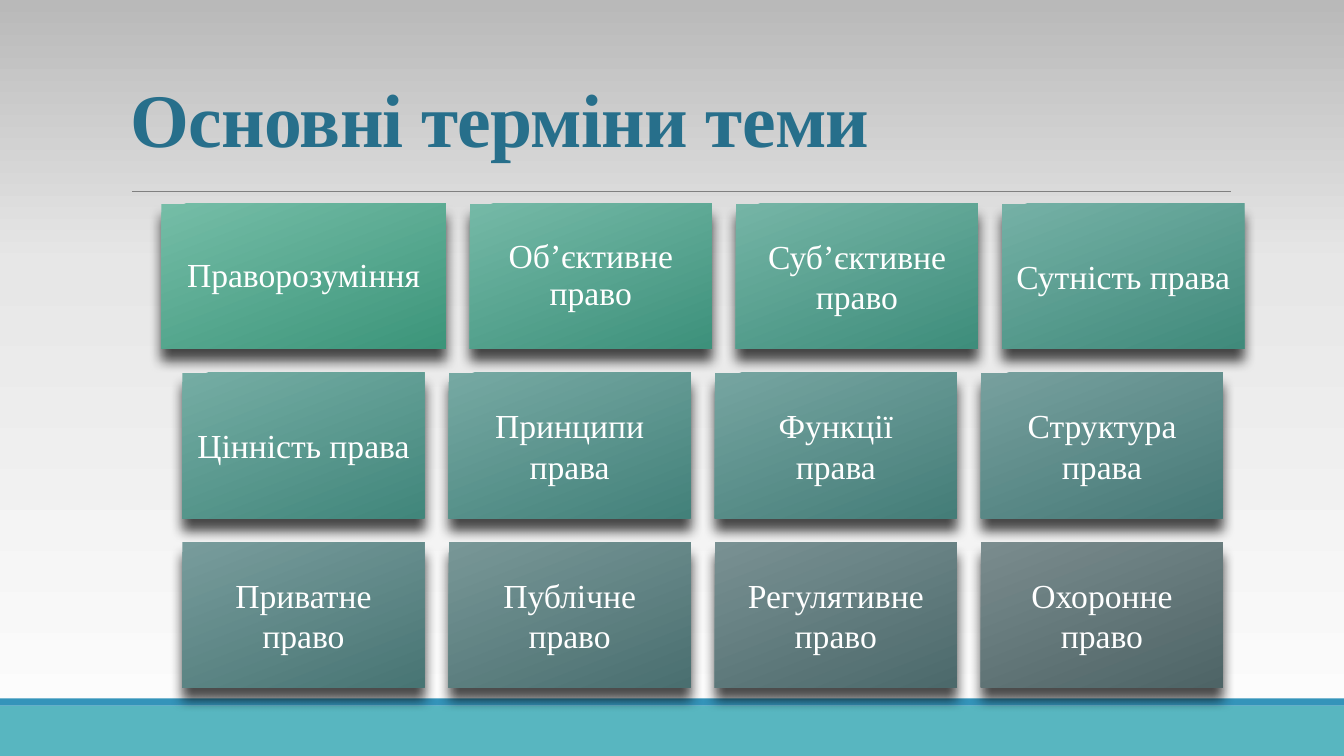
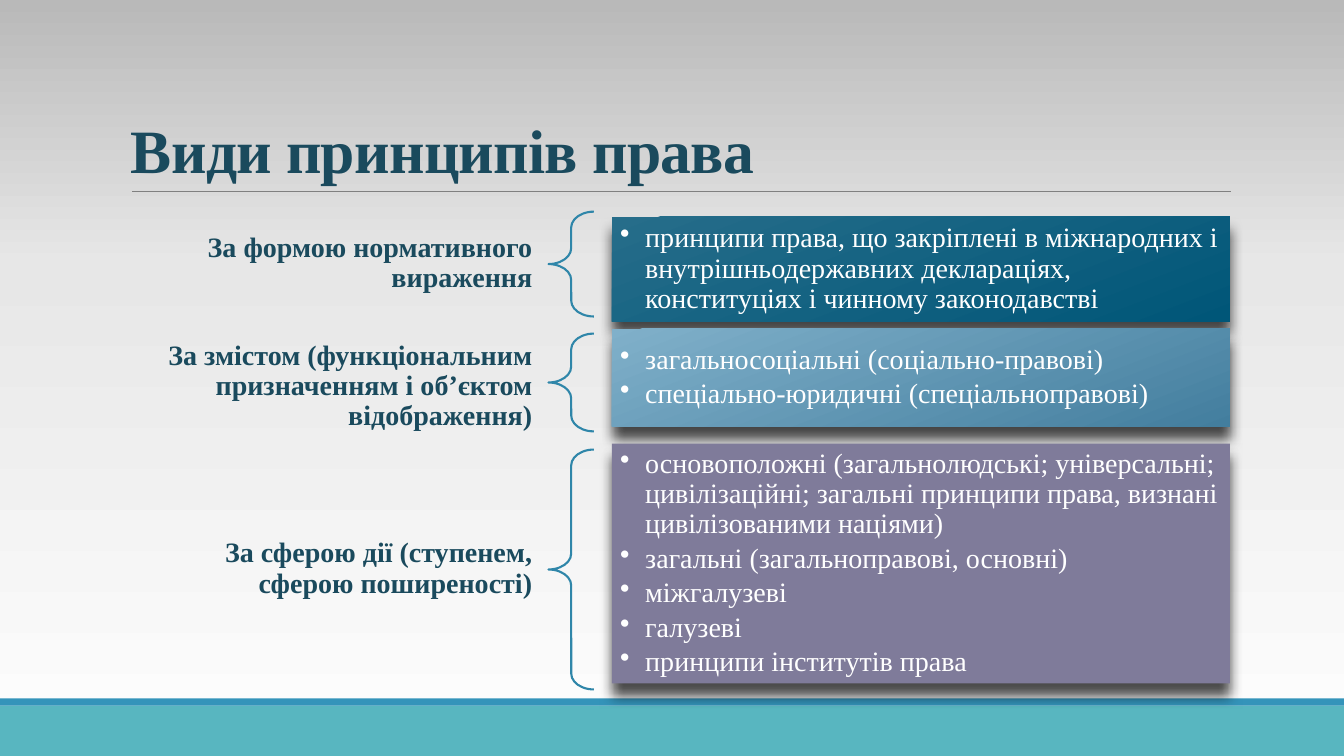
"""Build two slides on the terms and the principles of law."""
from dataclasses import dataclass

from lxml import etree
from pptx import Presentation
from pptx import util as u
from pptx.dml.color import RGBColor
from pptx.enum import shapes, text
from pptx.oxml import ns


@dataclass(frozen=True)
class Theme:
    font: str = "Times New Roman"
    backdrop: tuple = ((0, "FEFEFE"), (65, "E7E7E7"), (100, "B9B9B9"))
    band: str = "58B6C0"
    stripe: str = "3494BA"
    rule: str = "808080"
    brace: str = "2F86A9"
    bright: str = "276F8B"
    dark: str = "1A4A5D"
    light: str = "FFFFFF"
    shadow: str = "000000"
    term_size: int = 24
    body_size: int = 20


THEME = Theme()

TERM_ROWS = [
    [("Праворозуміння", 0.9, "75BDA7", "3C957A"),
     ("Об’єктивне право", 0.9, "75B9A7", "3D917B"),
     ("Суб’єктивне право", 1.0, "75B5A6", "3E8D7B"),
     ("Сутність права", 1.0, "75B1A6", "408A7B")],
    [("Цінність права", 1.0, "75ADA4", "41867B"),
     ("Принципи права", 1.0, "76A9A3", "43817A"),
     ("Функції\nправа", 1.0, "76A5A1", "447D78"),
     ("Структура права", 1.0, "77A09E", "467977")],
    [("Приватне право", 1.0, "789C9C", "487574"),
     ("Публічне право", 1.0, "789797", "4A6F70"),
     ("Регулятивне право", 1.0, "799193", "4C696B"),
     ("Охоронне право", 1.0, "7A8C8E", "4E6466")],
]
WIDE_TERM = "Праворозуміння"

PRINCIPLES = [
    {"label": "За формою нормативного вираження",
     "label_top": 2.13, "brace_top": 2.1, "box_top": 2.15, "height": 1.04,
     "colours": ("266D8A", "005678"),
     "kinds": ["принципи права, що закріплені в міжнародних і внутрішньодержавних "
               "деклараціях, конституціях і чинному законодавстві"]},
    {"label": "За змістом (функціональним призначенням і об’єктом відображення)",
     "label_top": 3.35, "brace_top": 3.31, "box_top": 3.26, "height": 0.97,
     "colours": ("80B0CA", "437E9E"),
     "kinds": ["загальносоціальні (соціально-правові)",
               "спеціально-юридичні (спеціальноправові)"]},
    {"label": "За сферою дії (ступенем, сферою поширеності)",
     "label_top": 5.16, "brace_top": 4.46, "box_top": 4.4, "height": 2.38,
     "colours": ("7F7B9A",),
     "kinds": ["основоположні (загальнолюдські; універсальні; цивілізаційні; "
               "загальні принципи права, визнані цивілізованими націями)",
               "загальні (загальноправові, основні)",
               "міжгалузеві",
               "галузеві",
               "принципи інститутів права"]},
]


def inches(*lengths):
    return [u.Inches(length) for length in lengths]


def rgb(colour):
    return RGBColor.from_string(colour)


def child(parent, tag, **attributes):
    return etree.SubElement(parent, ns.qn(tag), {k: str(v) for k, v in attributes.items()})


def set_gradient(fill, element, stops, clockwise):
    fill.gradient()
    fill.gradient_angle = 360 - clockwise
    stop_list = next(element.iter(ns.qn("a:gsLst")))
    for stop in list(stop_list):
        stop_list.remove(stop)
    for position, colour in stops:
        child(child(stop_list, "a:gs", pos=position * 1000), "a:srgbClr", val=colour)


def write(frame, content, size, colour, bold=False, align=text.PP_ALIGN.LEFT,
          anchor=text.MSO_ANCHOR.MIDDLE, spacing=1.0, margins=(0.1, 0.1)):
    frame.word_wrap = True
    frame.vertical_anchor = anchor
    frame.margin_left = frame.margin_right = u.Inches(margins[0])
    frame.margin_top = frame.margin_bottom = u.Inches(margins[1])
    frame.text = content
    for paragraph in frame.paragraphs:
        paragraph.alignment = align
        paragraph.line_spacing = spacing
        for run in paragraph.runs:
            run.font.name = THEME.font
            run.font.size = u.Pt(size)
            run.font.bold = bold
            run.font.color.rgb = rgb(colour)


def add_block(slide, left, top, width, height, colours):
    block = slide.shapes.add_shape(
        shapes.MSO_SHAPE.RECTANGLE, *inches(left, top, width, height))
    block.shadow.inherit = False
    block.line.fill.background()
    if len(colours) == 1:
        block.fill.solid()
        block.fill.fore_color.rgb = rgb(colours[0])
    else:
        set_gradient(block.fill, block.element, zip((0, 100), colours), 69)
    return block


def cast_shadow(block):
    effects = next(block.element.iter(ns.qn("a:effectLst")))
    shadow = child(effects, "a:outerShdw", blurRad=u.Pt(9), dist=u.Pt(9),
                   dir=90 * 60000, algn="ctr", rotWithShape=0)
    child(child(shadow, "a:srgbClr", val=THEME.shadow), "a:alpha", val=70000)


def add_base(deck, title, top, height, size, colour):
    slide = deck.slides.add_slide(deck.slide_layouts[6])
    set_gradient(slide.background.fill, slide.element, THEME.backdrop, 270)
    add_block(slide, 0, 7, 13.33, 0.5, (THEME.band,))
    add_block(slide, 0, 6.93, 13.33, 0.07, (THEME.stripe,))
    rule = slide.shapes.add_connector(
        shapes.MSO_CONNECTOR.STRAIGHT, *inches(1.31, 1.9, 12.21, 1.9))
    rule.line.color.rgb = rgb(THEME.rule)
    rule.line.width = u.Pt(0.5)
    child(rule.element.spPr, "a:effectLst")
    heading = slide.shapes.add_textbox(*inches(1.2, top, 11, height)).text_frame
    write(heading, title, size, colour, bold=True, spacing=0.85,
          anchor=text.MSO_ANCHOR.BOTTOM, margins=(0.1, 0.05))
    heading.paragraphs[0].runs[0].font._element.set("spc", "-50")
    return slide


def add_terms(deck):
    slide = add_base(deck, "Основні терміни теми", 0.7, 0.97, 54, THEME.bright)
    centre, first_top, height, gap = 6.97, 2.02, 1.44, 0.24
    for row, terms in enumerate(TERM_ROWS):
        widths = [2.82 if term[0] == WIDE_TERM else 2.4 for term in terms]
        left = centre - (sum(widths) + gap * (len(widths) - 1)) / 2
        for (term, spacing, *colours), width in zip(terms, widths):
            tile = add_block(slide, left, first_top + row * (height + gap),
                             width, height, colours)
            cast_shadow(tile)
            write(tile.text_frame, term, THEME.term_size, THEME.light,
                  align=text.PP_ALIGN.CENTER, spacing=spacing)
            left += width + gap


def add_bullets(frame):
    for paragraph in frame.paragraphs:
        paragraph.space_after = u.Pt(3)
        properties = paragraph._p.get_or_add_pPr()
        properties.set("marL", str(u.Inches(0.25)))
        properties.set("indent", str(-u.Inches(0.25)))
        child(properties, "a:buChar", char="•")


def add_principles(deck):
    slide = add_base(deck, "Види принципів права", 0.31, 1.59, 44, THEME.dark)
    for principle in PRINCIPLES:
        height = principle["height"]
        label = slide.shapes.add_textbox(*inches(1.43, principle["label_top"], 4.01, 0.97))
        write(label.text_frame, principle["label"], THEME.body_size, THEME.dark, bold=True,
              align=text.PP_ALIGN.RIGHT, spacing=0.9, margins=(0.16, 0.06))
        brace = slide.shapes.add_shape(
            shapes.MSO_SHAPE.LEFT_BRACE, *inches(5.44, principle["brace_top"], 0.45, height))
        brace.adjustments[0] = 0.35
        brace.shadow.inherit = False
        brace.fill.background()
        brace.line.color.rgb = rgb(THEME.brace)
        brace.line.width = u.Pt(1.5)
        box = add_block(slide, 6.07, principle["box_top"], 6.13, height, principle["colours"])
        cast_shadow(box)
        write(box.text_frame, "\n".join(principle["kinds"]), THEME.body_size, THEME.light,
              spacing=0.9, margins=(0.08, 0.08))
        add_bullets(box.text_frame)


def main():
    deck = Presentation()
    deck.slide_width, deck.slide_height = inches(13.33, 7.5)
    add_terms(deck)
    add_principles(deck)
    deck.save("out.pptx")


if __name__ == "__main__":
    main()
